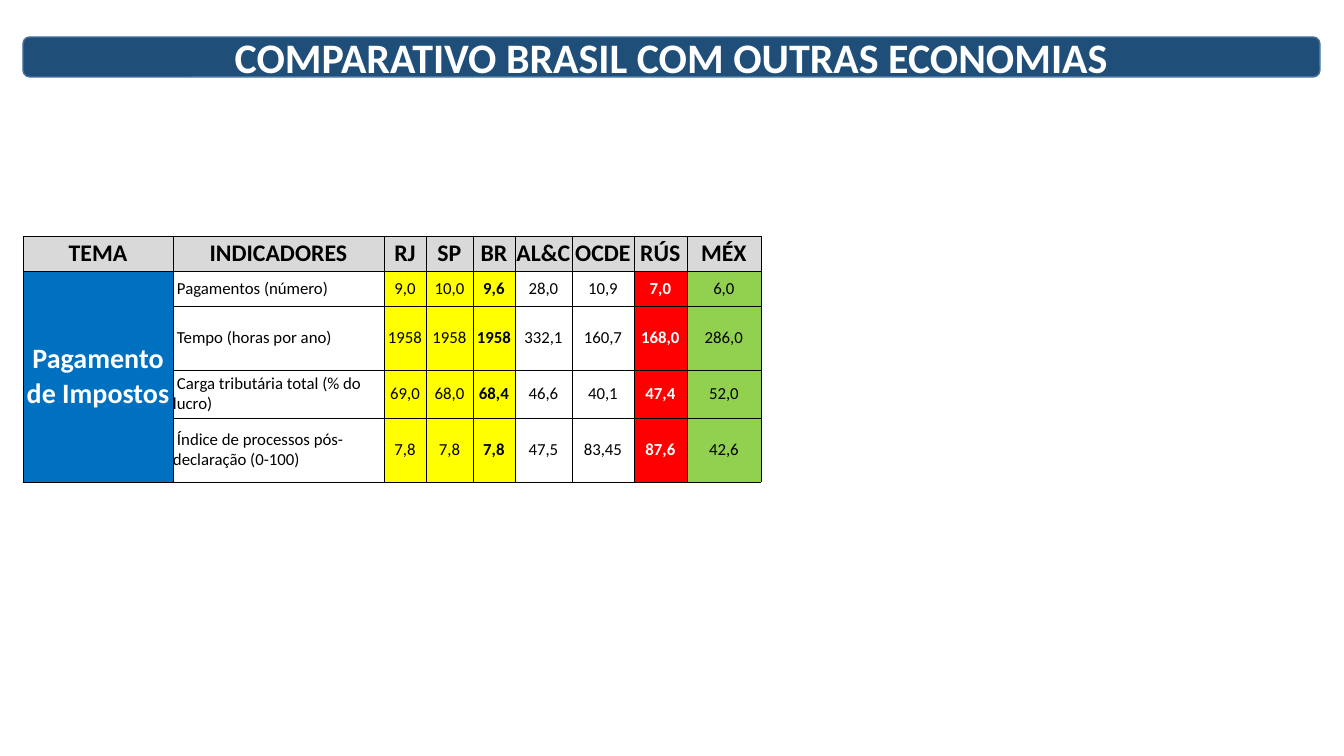
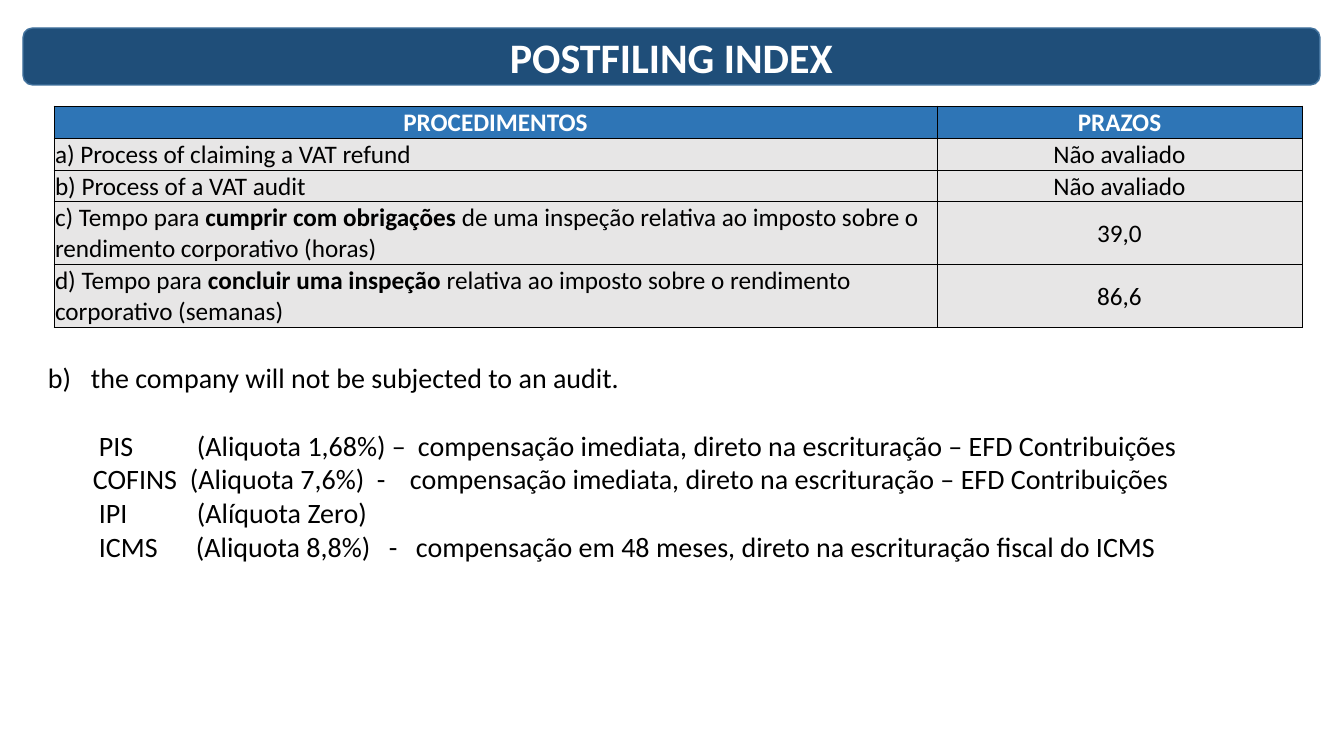
from dataclasses import dataclass

from lxml import etree
from pptx import Presentation
from pptx.dml.color import RGBColor
from pptx.enum.shapes import MSO_SHAPE
from pptx.enum.text import MSO_ANCHOR, PP_ALIGN
from pptx.oxml.ns import qn
from pptx.util import Pt

ROUNDED = MSO_SHAPE.ROUNDED_RECTANGLE
MIDDLE = MSO_ANCHOR.MIDDLE
LEFT, CENTER = PP_ALIGN.LEFT, PP_ALIGN.CENTER
EMU_PER_PX = 914400 / 100.8


@dataclass(frozen=True)
class Theme:
    font: str = "Calibri"
    black: str = "000000"
    white: str = "FFFFFF"
    band: str = "1F4E79"
    band_line: str = "43739E"
    grey_head: str = "D9D9D9"
    topic: str = "0070C0"
    brazil: str = "FFFF00"
    russia: str = "FF0000"
    mexico: str = "92D050"
    blue_head: str = "2E75B6"
    grey_body: str = "E7E6E6"
    title_size: int = 30
    text_size: int = 20
    deadline_size: int = 18
    head_size: int = 17
    value_size: int = 12


T = Theme()

INDICATOR_HEAD = ["TEMA", "INDICADORES", "RJ", "SP", "BR", "AL&C", "OCDE", "RÚS", "MÉX"]
INDICATORS = [
    ["Pagamentos (número)", "9,0", "10,0", "9,6", "28,0", "10,9", "7,0", "6,0"],
    ["Tempo (horas por ano)", "1958", "1958", "1958", "332,1", "160,7", "168,0", "286,0"],
    ["Carga tributária total (% do lucro)",
     "69,0", "68,0", "68,4", "46,6", "40,1", "47,4", "52,0"],
    ["Índice de processos pós-declaração (0-100)",
     "7,8", "7,8", "7,8", "47,5", "83,45", "87,6", "42,6"],
]
# Fill of each indicator column, from the names to México
COLUMN_FILLS = [None, T.brazil, T.brazil, T.brazil, None, None, T.russia, T.mexico]

# Procedure as runs, every second one bold, and its deadline
DEADLINES = [
    (["a) Process of claiming a VAT refund"], "Não avaliado"),
    (["b) Process of a VAT audit"], "Não avaliado"),
    (["c) Tempo para ", "cumprir com obrigações",
      " de uma inspeção relativa ao imposto sobre o rendimento corporativo (horas)"], "39,0"),
    (["d) Tempo para ", "concluir uma inspeção",
      " relativa ao imposto sobre o rendimento corporativo (semanas)"], "86,6"),
]

# Each line: tab position in px and the text that starts there
AUDIT_NOTE = [(0, "b)"), (43, "the company will not be subjected to an audit.")]
REFUND = "compensação imediata, direto na escrituração – EFD Contribuições"
TAXES = [
    [(51, "PIS"), (149, "(Aliquota 1,68%) –"), (370, REFUND)],
    [(45, "COFINS"), (142, "(Aliquota 7,6%)"), (329, "-"), (362, REFUND)],
    [(51, "IPI"), (149, "(Alíquota Zero)")],
    [(51, "ICMS"), (148, "(Aliquota 8,8%)"), (341, "-"),
     (368, "compensação em 48 meses, direto na escrituração fiscal do ICMS")],
]


def px(n):
    return round(n * EMU_PER_PX)


def rgb(value):
    return RGBColor.from_string(value)


def put(obj, **values):
    for name, value in values.items():
        setattr(obj, name, value)


def add_run(p, text, size, color=T.black, bold=False):
    r = p.add_run()
    r.text = text
    put(r.font, name=T.font, size=Pt(size), bold=bold)
    r.font.color.rgb = rgb(color)


def title_band(s, text, box):
    sp = s.shapes.add_shape(ROUNDED, *map(px, box))
    sp.shadow.inherit = False
    sp.fill.solid()
    sp.fill.fore_color.rgb = rgb(T.band)
    sp.line.color.rgb = rgb(T.band_line)
    sp.line.width = Pt(1)
    tf = sp.text_frame
    put(tf, word_wrap=True, vertical_anchor=MIDDLE)
    p = tf.paragraphs[0]
    p.alignment = CENTER
    add_run(p, text, T.title_size, T.white, True)


def border_cell(cell):
    tc_pr = cell._tc.get_or_add_tcPr()
    for i, side in enumerate(("lnL", "lnR", "lnT", "lnB")):
        ln = etree.Element(qn(f"a:{side}"), w=str(Pt(0.5)))
        fill = etree.SubElement(ln, qn("a:solidFill"))
        etree.SubElement(fill, qn("a:srgbClr"), val=T.black)
        tc_pr.insert(i, ln)


def grid(s, left, top, widths, heights, inset=0):
    """Add a plain table with thin borders and no fills."""
    table = s.shapes.add_table(len(heights), len(widths), px(left), px(top),
                               px(sum(widths)), px(sum(heights))).table
    put(table, first_row=False, horz_banding=False)
    for col, width in zip(table.columns, widths):
        col.width = px(width)
    for row, height in zip(table.rows, heights):
        row.height = px(height)
    margins = dict.fromkeys(("margin_left", "margin_right", "margin_top"), px(inset))
    for cell in table.iter_cells():
        put(cell, vertical_anchor=MIDDLE, margin_bottom=0, **margins)
        cell.fill.background()
        border_cell(cell)
    return table


def write_cell(cell, runs, size, fill=None, color=T.black, bold=False, align=CENTER):
    """Write runs into a cell; every second run is bold."""
    if fill:
        cell.fill.solid()
        cell.fill.fore_color.rgb = rgb(fill)
    p = cell.text_frame.paragraphs[0]
    p.alignment = align
    for i, text in enumerate(runs):
        add_run(p, text, size, color, bold or i % 2 == 1)
    return p


def indicator_table(s, left, top):
    table = grid(s, left, top, [150, 211, 42, 47, 42, 57, 62, 53, 74],
                 [35, 35, 64, 48, 64])
    for c, text in enumerate(INDICATOR_HEAD):
        write_cell(table.cell(0, c), [text], T.head_size, T.grey_head, bold=True)

    # Topic beside all its indicators
    topic = table.cell(1, 0)
    topic.merge(table.cell(len(INDICATORS), 0))
    write_cell(topic, ["Pagamento de Impostos"], T.text_size, T.topic, T.white, True)

    for r, row in enumerate(INDICATORS, 1):
        for c, (text, fill) in enumerate(zip(row, COLUMN_FILLS), 1):
            russia = fill == T.russia
            p = write_cell(table.cell(r, c), [text], T.value_size, fill,
                           T.white if russia else T.black,
                           russia or INDICATOR_HEAD[c] == "BR",
                           LEFT if c == 1 else CENTER)
            if c == 1:
                p._p.get_or_add_pPr().set("indent", str(px(4)))


def deadline_table(s, left, top):
    table = grid(s, left, top, [883, 365], [32, 32, 31, 63, 63], inset=1)
    for c, text in enumerate(("PROCEDIMENTOS", "PRAZOS")):
        write_cell(table.cell(0, c), [text], T.deadline_size, T.blue_head, T.white, True)
    for r, (procedure, deadline) in enumerate(DEADLINES, 1):
        write_cell(table.cell(r, 0), procedure, T.deadline_size, T.grey_body, align=LEFT)
        write_cell(table.cell(r, 1), [deadline], T.deadline_size, T.grey_body)


def tax_notes(s, box):
    tf = s.shapes.add_textbox(*map(px, box)).text_frame
    tf.word_wrap = True
    for i, line in enumerate([AUDIT_NOTE] + TAXES):
        p = tf.paragraphs[0] if i == 0 else tf.add_paragraph()
        tabs = etree.SubElement(p._p.get_or_add_pPr(), qn("a:tabLst"))
        text = ""
        for stop, part in line:
            if stop:
                etree.SubElement(tabs, qn("a:tab"), pos=str(px(stop)), algn="l")
                text += "\t"
            text += part
        if i == 1:
            p.space_before = Pt(24)
        add_run(p, text, T.text_size)


def comparison_slide(s):
    title_band(s, "COMPARATIVO BRASIL COM OUTRAS ECONOMIAS", (23, 37, 1297, 40))
    indicator_table(s, 23, 236)


def postfiling_slide(s):
    title_band(s, "POSTFILING INDEX", (23, 28, 1297, 57))
    deadline_table(s, 54, 106)
    tax_notes(s, (38, 356, 1265, 214))


def main():
    prs = Presentation()
    put(prs, slide_width=px(1344), slide_height=px(756))
    for build in (comparison_slide, postfiling_slide):
        build(prs.slides.add_slide(prs.slide_layouts[6]))
    prs.save("out.pptx")


if __name__ == "__main__":
    main()
